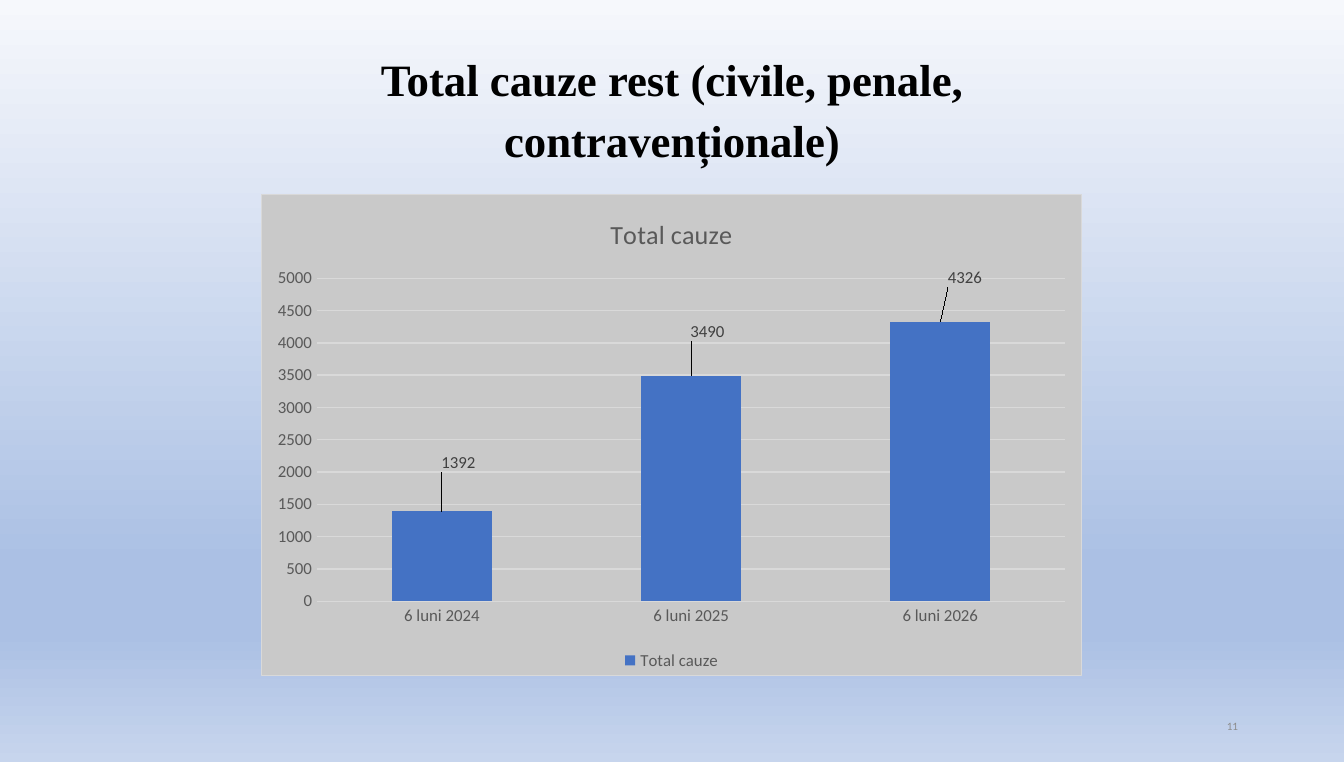
from dataclasses import dataclass

from lxml.etree import SubElement
from pptx import Presentation
from pptx.chart.chart import Chart
from pptx.chart.data import CategoryChartData
from pptx.dml.color import RGBColor
from pptx.enum.chart import XL_CHART_TYPE as ChartType
from pptx.enum.chart import XL_LABEL_POSITION as LabelPosition
from pptx.enum.chart import XL_LEGEND_POSITION as LegendPosition
from pptx.enum.chart import XL_TICK_MARK as TickMark
from pptx.enum.text import MSO_ANCHOR as Anchor
from pptx.enum.text import MSO_AUTO_SIZE as AutoSize
from pptx.enum.text import PP_ALIGN as Align
from pptx.oxml import parse_xml
from pptx.oxml.ns import nsdecls, qn
from pptx.slide import Slide
from pptx.text.text import Font
from pptx.util import Cm, Pt


@dataclass(frozen=True)
class TextStyle:
    size: float
    color: str
    name: str = "Calibri"
    bold: bool = False


@dataclass(frozen=True)
class Theme:
    title: TextStyle = TextStyle(24, "000000", "Times New Roman", True)
    chart: TextStyle = TextStyle(10, "000000")
    chart_title: TextStyle = TextStyle(14, "595959")
    axis: TextStyle = TextStyle(9, "595959")
    label: TextStyle = TextStyle(9, "404040")
    page_number: TextStyle = TextStyle(6, "8C8C8C")
    bar: str = "4472C4"
    panel: str = "C9C9C9"
    line: str = "D9D9D9"
    line_width: float = 0.75
    background: tuple = ((0, "F6F8FC"), (74, "ABC0E4"), (83, "ABC0E4"), (100, "C7D5ED"))


@dataclass(frozen=True)
class Bar:
    period: str
    cases: int
    label_shift: tuple[float, float]  # fractions of the chart size


THEME = Theme()
SERIES_NAME = "Total cauze"
BARS = (
    Bar("6 luni 2024", 1392, (0.02, -0.07)),
    Bar("6 luni 2025", 3490, (0.02, -0.06)),
    Bar("6 luni 2026", 4326, (0.03, -0.06)),
)


def style_font(font: Font, style: TextStyle) -> None:
    font.name = style.name
    font.size = Pt(style.size)
    font.bold = style.bold
    font.color.rgb = RGBColor.from_string(style.color)


def paint_background(slide: Slide) -> None:
    fill = slide.background.fill
    fill.gradient()
    fill.gradient_angle = 270
    stops = slide.element.find(f".//{qn('a:gsLst')}")
    for stop in list(stops):
        stops.remove(stop)
    for percent, color in THEME.background:
        stop = SubElement(stops, qn("a:gs"), pos=str(percent * 1000))
        SubElement(stop, qn("a:srgbClr"), val=color)


def add_title(slide: Slide, text: str) -> None:
    title = slide.shapes.title
    title.left, title.top, title.width, title.height = Cm(6.35), Cm(0.69), Cm(12.7), Cm(2.54)
    frame = title.text_frame
    frame.text = text
    frame.word_wrap = True
    frame.vertical_anchor = Anchor.TOP
    frame.auto_size = AutoSize.SHAPE_TO_FIT_TEXT
    paragraph = frame.paragraphs[0]
    paragraph.alignment = Align.CENTER
    paragraph.line_spacing = 1.15
    style_font(paragraph.font, THEME.title)


def add_page_number(slide: Slide, number: int) -> None:
    frame = slide.shapes.add_textbox(Cm(17.93), Cm(13.36), Cm(5.72), Cm(0.76)).text_frame
    frame.word_wrap = True
    frame.vertical_anchor = Anchor.MIDDLE
    paragraph = frame.paragraphs[0]
    paragraph.text = str(number)
    paragraph.alignment = Align.RIGHT
    paragraph.line_spacing = 0.9
    style_font(paragraph.font, THEME.page_number)


def paint_chart_area(chart: Chart) -> None:
    chart.element.find(qn("c:chart")).addnext(parse_xml(
        f'<c:spPr {nsdecls("c", "a")}>'
        f'<a:solidFill><a:srgbClr val="{THEME.panel}"/></a:solidFill>'
        f'<a:ln w="{Pt(THEME.line_width)}"><a:solidFill>'
        f'<a:srgbClr val="{THEME.line}"/></a:solidFill></a:ln></c:spPr>'))


def format_axes(chart: Chart) -> None:
    for axis in (chart.category_axis, chart.value_axis):
        axis.major_tick_mark = axis.minor_tick_mark = TickMark.NONE
        axis.format.line.fill.background()
        style_font(axis.tick_labels.font, THEME.axis)
    axis = chart.value_axis
    axis.minimum_scale, axis.maximum_scale, axis.major_unit = 0, 5000, 500
    grid_line = axis.major_gridlines.format.line
    grid_line.color.rgb = RGBColor.from_string(THEME.line)
    grid_line.width = Pt(THEME.line_width)


def format_bars(chart: Chart) -> None:
    plot = chart.plots[0]
    plot.gap_width = 150
    plot.vary_by_categories = False
    series = plot.series[0]
    series.format.fill.solid()
    series.format.fill.fore_color.rgb = RGBColor.from_string(THEME.bar)
    series.data_labels.show_value = True
    style_font(series.data_labels.font, THEME.label)
    # Each value label is shifted from its place above the bar
    for index, bar in enumerate(BARS):
        label = series.points[index].data_label
        style_font(label.font, THEME.label)
        label.position = LabelPosition.OUTSIDE_END
        shift_x, shift_y = bar.label_shift
        label_index = series.data_labels._element.findall(f"{qn('c:dLbl')}/{qn('c:idx')}")[index]
        label_index.addnext(parse_xml(
            f'<c:layout {nsdecls("c")}><c:manualLayout>'
            f'<c:x val="{shift_x}"/><c:y val="{shift_y}"/></c:manualLayout></c:layout>'))


def add_cases_chart(slide: Slide) -> None:
    data = CategoryChartData()
    data.categories = [bar.period for bar in BARS]
    data.add_series(SERIES_NAME, [bar.cases for bar in BARS])
    chart = slide.shapes.add_chart(
        ChartType.COLUMN_CLUSTERED, Cm(4.93), Cm(3.66), Cm(15.52), Cm(9.12), data).chart
    style_font(chart.font, THEME.chart)
    paint_chart_area(chart)

    # Chart title and legend
    chart.has_title = True
    title_frame = chart.chart_title.text_frame
    title_frame.text = SERIES_NAME
    style_font(title_frame.paragraphs[0].font, THEME.chart_title)
    chart.chart_title.include_in_layout = False
    chart.has_legend = True
    chart.legend.position = LegendPosition.BOTTOM
    chart.legend.include_in_layout = False
    style_font(chart.legend.font, THEME.axis)

    format_axes(chart)
    format_bars(chart)


def main() -> None:
    presentation = Presentation()
    presentation.slide_width, presentation.slide_height = Cm(25.4), Cm(14.4)
    slide = presentation.slides.add_slide(presentation.slide_layouts.get_by_name("Title Only"))
    paint_background(slide)
    add_page_number(slide, 11)
    add_title(slide, "Total cauze rest (civile, penale, contravenționale)")
    add_cases_chart(slide)
    presentation.save("out.pptx")


if __name__ == "__main__":
    main()
